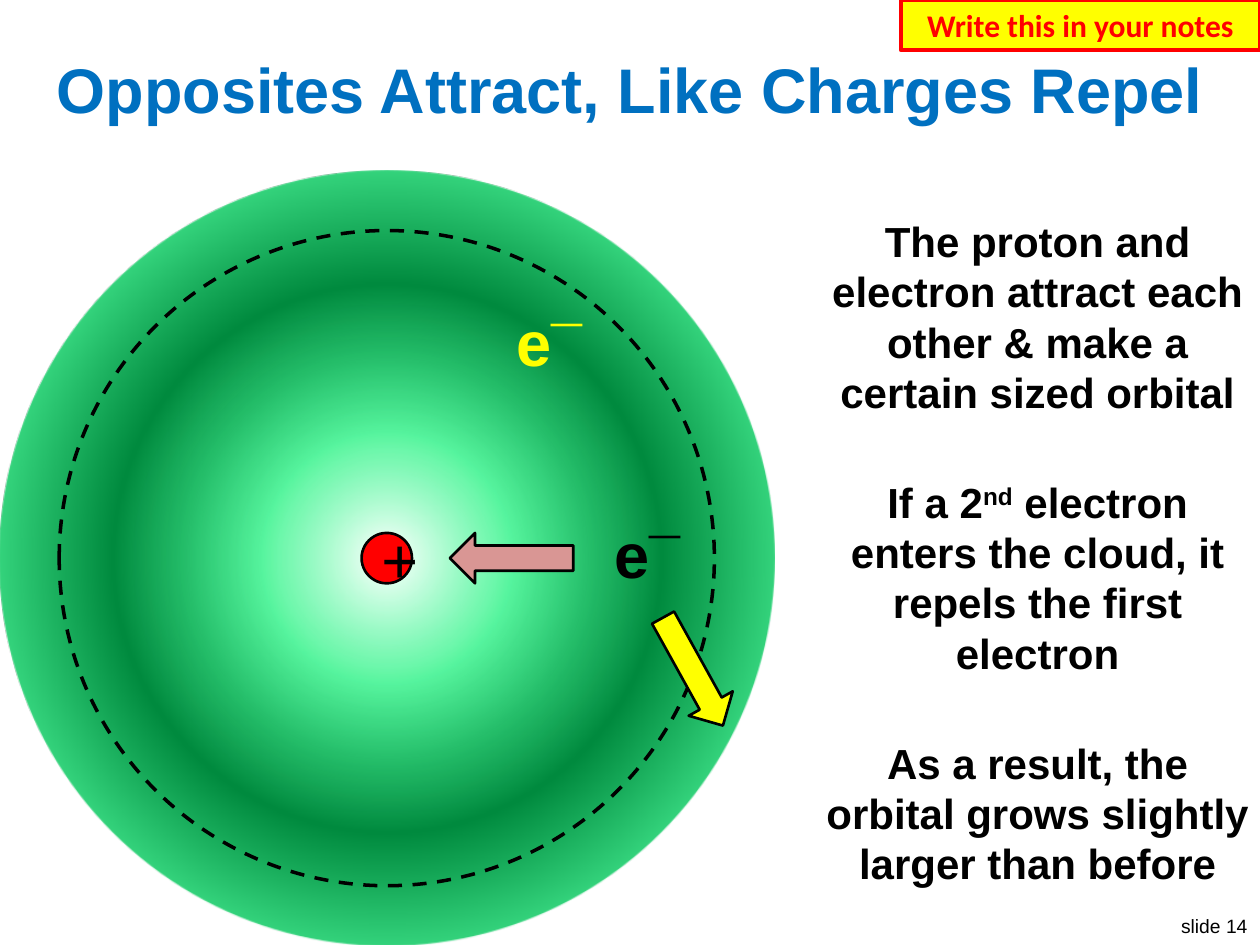
from lxml import etree
from pptx import Presentation
from pptx.dml.color import RGBColor
from pptx.enum import dml, shapes, text
from pptx.oxml import ns
from pptx.util import Inches, Pt

COLORS = {
    "black": "000000", "title": "0070C0", "yellow": "FFFF00", "red": "FF0000",
    "pink": "D99694", "white": "FFFFFF", "green": "008A3E", "mint": "53FFA1",
}
SHAPE = shapes.MSO_SHAPE
ALIGN = text.PP_ALIGN

# Gradient stops: position %, colour name, opacity %
INNER_STOPS = [(0, "white", 100), (23, "green", 48), (45, "green", 100),
               (71, "green", 68), (99, "white", 100)]
OUTER_STOPS = [(0, "white", 100), (23, "mint", 84), (50, "green", 100),
               (83, "mint", 100), (99, "white", 100)]


def rgb(name):
    return RGBColor.from_string(COLORS[name])


def box(left, top, width, height):
    return Inches(left), Inches(top), Inches(width), Inches(height)


def style_paragraph(paragraph, size, color, bold=True, font="Arial", align=ALIGN.CENTER):
    paragraph.alignment = align
    paragraph.font.size = Pt(size)
    paragraph.font.name = font
    paragraph.font.bold = bold
    paragraph.font.color.rgb = rgb(color)


def add_preset(slide, kind, area, fill=None, line=None, width=1.5):
    shape = slide.shapes.add_shape(kind, *box(*area))
    shape.shadow.inherit = False
    if fill:
        shape.fill.solid()
        shape.fill.fore_color.rgb = rgb(fill)
    else:
        shape.fill.background()
    if line:
        shape.line.color.rgb = rgb(line)
        shape.line.width = Pt(width)
    else:
        shape.line.fill.background()
    return shape


def add_text(slide, area, wrap=True):
    frame = slide.shapes.add_textbox(*box(*area)).text_frame
    frame.word_wrap = wrap
    return frame.paragraphs[0]


def set_radial_gradient(shape, stops):
    shape.fill.gradient()
    gradient = shape._element.spPr.find(ns.qn("a:gradFill"))
    for child in list(gradient):
        gradient.remove(child)
    stop_list = etree.SubElement(gradient, ns.qn("a:gsLst"))
    for position, color, opacity in stops:
        stop = etree.SubElement(stop_list, ns.qn("a:gs"), pos=str(position * 1000))
        value = etree.SubElement(stop, ns.qn("a:srgbClr"), val=COLORS[color])
        if opacity < 100:
            etree.SubElement(value, ns.qn("a:alpha"), val=str(opacity * 1000))
    radial = etree.SubElement(gradient, ns.qn("a:path"), path="circle")
    etree.SubElement(radial, ns.qn("a:fillToRect"), l="50000", t="50000", r="50000", b="50000")


def add_cloud(slide, center_x, center_y):
    """Electron cloud: the first orbital, the grown cloud and the dashed orbital edge."""
    def circle(diameter, **options):
        area = (center_x - diameter / 2, center_y - diameter / 2, diameter, diameter)
        return add_preset(slide, SHAPE.OVAL, area, **options)

    orbital = circle(5.2, line="black", width=2)
    set_radial_gradient(orbital, INNER_STOPS)
    set_radial_gradient(circle(6.15), OUTER_STOPS)
    edge = circle(5.2, line="black", width=2)
    for ring in (orbital, edge):
        ring.line.dash_style = dml.MSO_LINE.DASH


def add_electron(slide, left, top, color):
    paragraph = add_text(slide, (left, top, 0.73, 0.71), wrap=False)
    style_paragraph(paragraph, 36, color, align=ALIGN.LEFT)
    paragraph.add_run().text = "e"
    charge = paragraph.add_run()
    charge.text = "¯"
    charge.font.size = Pt(32)


def add_particles(slide):
    """Electrons, proton and the arrows for attraction and repulsion."""
    add_electron(slide, 4, 2.36, "yellow")
    add_electron(slide, 4.78, 4.04, "black")
    proton = add_preset(slide, SHAPE.OVAL, (2.87, 4.23, 0.4, 0.4), "red", "black")
    proton.text_frame.text = "+"
    style_paragraph(proton.text_frame.paragraphs[0], 36, "black", bold=False)
    add_preset(slide, SHAPE.LEFT_ARROW, (3.57, 4.23, 0.98, 0.4), "pink", "black")
    repulsion = add_preset(slide, SHAPE.LEFT_ARROW, (5.01, 5.13, 0.98, 0.4), "yellow", "black")
    repulsion.rotation = 241


def add_explanations(slide, left, top, width, step):
    explanations = [
        ["The proton and electron attract each other & make a certain sized orbital"],
        ["If a 2", "nd", " electron enters the cloud, it repels the first electron"],
        ["As a result, the orbital grows slightly larger than before"],
    ]
    for index, parts in enumerate(explanations):
        paragraph = add_text(slide, (left, top + index * step, width, 1.72))
        style_paragraph(paragraph, 24, "black")
        for part in parts:
            run = paragraph.add_run()
            run.text = part
            if part == "nd":
                run.font._element.set("baseline", "30000")


def add_title(slide, area):
    title = slide.shapes.title
    title.left, title.top, title.width, title.height = box(*area)
    title.text_frame.text = "Opposites Attract, Like Charges Repel"
    title.text_frame.vertical_anchor = text.MSO_ANCHOR.MIDDLE
    style_paragraph(title.text_frame.paragraphs[0], 36, "title")


def add_note_banner(slide, area):
    banner = add_preset(slide, SHAPE.RECTANGLE, area, "yellow", "red", 2.25)
    banner.text_frame.text = "Write this in your notes"
    style_paragraph(banner.text_frame.paragraphs[0], 18, "red", font="Calibri")


def add_slide_number(slide, area):
    paragraph = add_text(slide, area, wrap=False)
    paragraph.text = "slide 14"
    style_paragraph(paragraph, 11, "black", bold=False, align=ALIGN.RIGHT)


def main():
    presentation = Presentation()
    presentation.slide_width, presentation.slide_height = Inches(10), Inches(7.5)
    slide = presentation.slides.add_slide(presentation.slide_layouts[5])
    add_slide_number(slide, (9.25, 7.21, 0.75, 0.29))
    add_cloud(slide, 3.07, 4.43)
    add_title(slide, (0.2, 0.3, 9.6, 0.8))
    add_particles(slide)
    add_explanations(slide, 6.46, 1.66, 3.55, 2.07)
    add_note_banner(slide, (7.15, 0, 2.85, 0.4))
    presentation.save("out.pptx")


if __name__ == "__main__":
    main()
